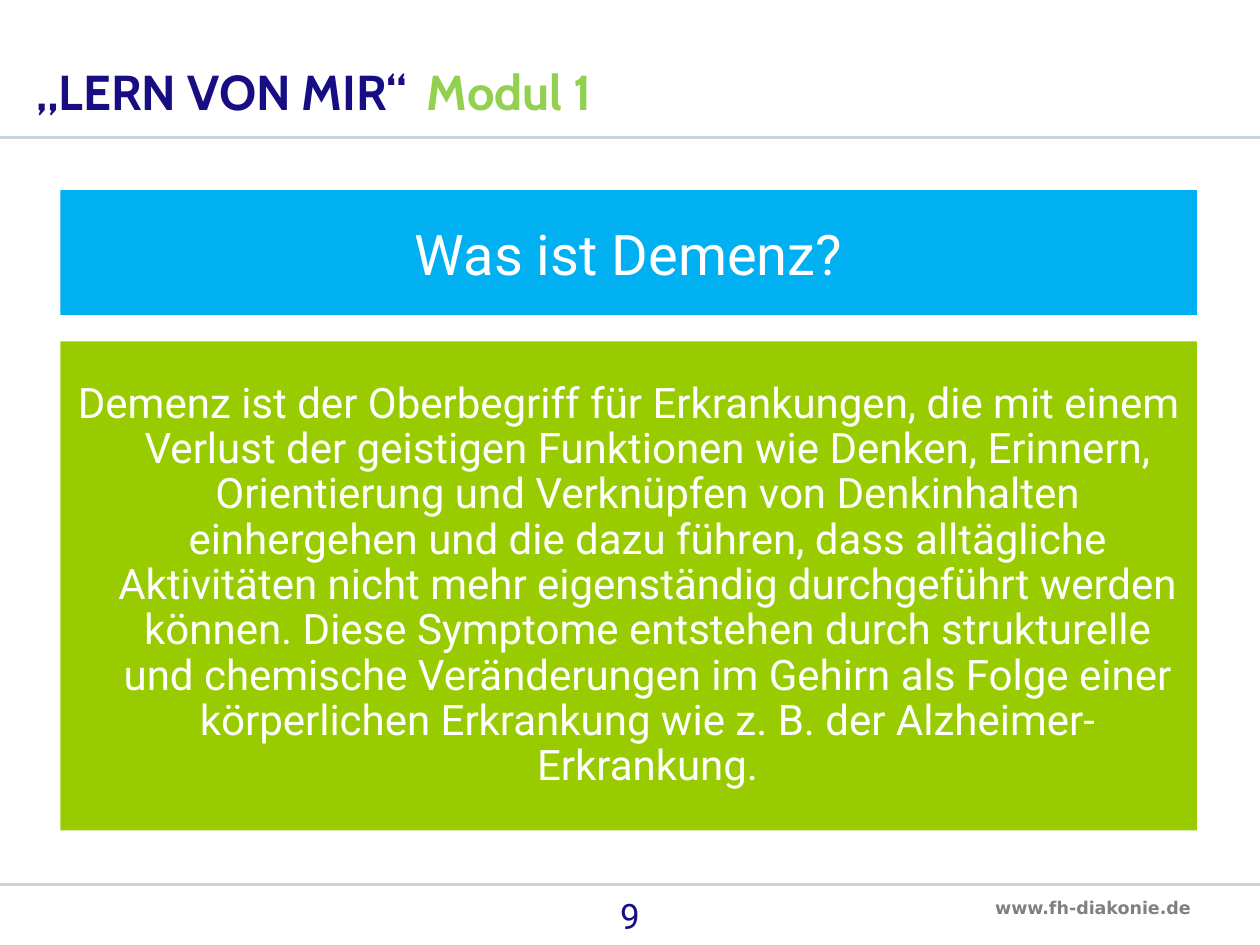
from lxml import etree
from pptx import Presentation
from pptx.dml.color import RGBColor
from pptx.enum.shapes import MSO_CONNECTOR, MSO_SHAPE
from pptx.enum.text import MSO_ANCHOR, PP_ALIGN
from pptx.oxml.ns import qn
from pptx.util import Inches, Pt

LEFT, CENTER = PP_ALIGN.LEFT, PP_ALIGN.CENTER
TOP, MIDDLE, BOTTOM = MSO_ANCHOR.TOP, MSO_ANCHOR.MIDDLE, MSO_ANCHOR.BOTTOM
RECTANGLE, STRAIGHT = MSO_SHAPE.RECTANGLE, MSO_CONNECTOR.STRAIGHT

WIDTH, HEIGHT = 10, 7.5
MARGIN, PANEL_WIDTH = 0.48, 9.02
NAVY, LIME, RULE, GRAY, WHITE = "170E83", "92D050", "C8D2DC", "808080", "FFFFFF"
SKY, GREEN = "00B0F0", "99CC00"

QUESTION = "Was ist Demenz?"
DEFINITION = (
    "Demenz ist der Oberbegriff für Erkrankungen, die mit einem Verlust der "
    "geistigen Funktionen wie Denken, Erinnern, Orientierung und Verknüpfen von "
    "Denkinhalten einhergehen und die dazu führen, dass alltägliche Aktivitäten "
    "nicht mehr eigenständig durchgeführt werden können. Diese Symptome entstehen "
    "durch strukturelle und chemische Veränderungen im Gehirn als Folge einer "
    "körperlichen Erkrankung wie z. B. der Alzheimer-Erkrankung."
)


def color(value):
    """Turn a hex string into a colour."""
    return RGBColor.from_string(value)


def write(shape, *spans, size, font="Roboto", bold=False, align=LEFT,
          anchor=TOP, spacing=1.0, hanging=0, tab=None, wrap=True):
    """Write one paragraph of (text, colour) spans into a shape."""
    frame = shape.text_frame
    frame.word_wrap = wrap
    frame.vertical_anchor = anchor
    para = frame.paragraphs[0]
    para.alignment = align
    para.line_spacing = spacing
    properties = para._p.get_or_add_pPr()
    if hanging:
        properties.set("marL", str(Inches(hanging)))
        properties.set("indent", str(-Inches(hanging)))
    if tab:
        stops = etree.SubElement(properties, qn("a:tabLst"))
        etree.SubElement(stops, qn("a:tab"), pos=str(Inches(tab)), algn="l")
    for text, fill in spans:
        span = para.add_run()
        span.text = text
        span.font.name = font
        span.font.size = Pt(size)
        span.font.bold = bold
        span.font.color.rgb = color(fill)


def add_label(page, box, *spans, **style):
    """Add a text box with formatted text."""
    label = page.shapes.add_textbox(*map(Inches, box))
    write(label, *spans, **style)


def add_panel(page, box, fill, text, **style):
    """Add a filled rectangle with centred white text."""
    panel = page.shapes.add_shape(RECTANGLE, *map(Inches, box))
    panel.shadow.inherit = False
    panel.fill.solid()
    panel.fill.fore_color.rgb = color(fill)
    panel.line.fill.background()
    write(panel, (text, WHITE), align=CENTER, anchor=MIDDLE, **style)


def add_rule(page, top):
    """Draw a thin line across the full page width."""
    rule = page.shapes.add_connector(
        STRAIGHT, 0, Inches(top), Inches(WIDTH), Inches(top))
    rule.line.color.rgb = color(RULE)
    rule.line.width = Pt(1.5)
    etree.SubElement(rule._element.spPr, qn("a:effectLst"))


def add_header(page, left, top, width, height):
    """Place the two-colour title and the line below it."""
    add_label(page, (left, top, width, height), ("„LERN VON MIR“\t", NAVY),
              ("Modul 1", LIME), size=28, font="Cabin", bold=True,
              anchor=BOTTOM, spacing=0.9, tab=3.1)
    add_rule(page, top + height + 0.08)


def add_content(page, left, top, width, height):
    """Stack the question panel above the definition panel."""
    banner, gap = 0.99, 0.21
    offset = banner + gap
    add_panel(page, (left, top, width, banner), SKY, QUESTION, size=32)
    add_panel(page, (left, top + offset, width, height - offset), GREEN,
              DEFINITION, size=24, spacing=0.9, hanging=0.3)


def add_footer(page, top, height):
    """Place the footer line, the page number and the web address."""
    number_width = 2.33
    add_rule(page, top)
    add_label(page, ((WIDTH - number_width) / 2, top + 0.03, number_width, height - 0.03),
              ("9", NAVY), size=20, align=CENTER)
    add_label(page, (7.8, top + 0.05, 1.78, 0.27), ("www.fh-diakonie.de", GRAY),
              size=10, font="DejaVu Sans", bold=True, wrap=False)


def main():
    """Build and save the deck."""
    deck = Presentation()
    deck.slide_width, deck.slide_height = Inches(WIDTH), Inches(HEIGHT)
    page = deck.slides.add_slide(deck.slide_layouts[6])
    add_header(page, 0.19, 0.43, 6.67, 0.58)
    add_content(page, MARGIN, 1.51, PANEL_WIDTH, 5.08)
    add_footer(page, 7.02, HEIGHT - 7.02)
    deck.save("out.pptx")


if __name__ == "__main__":
    main()
